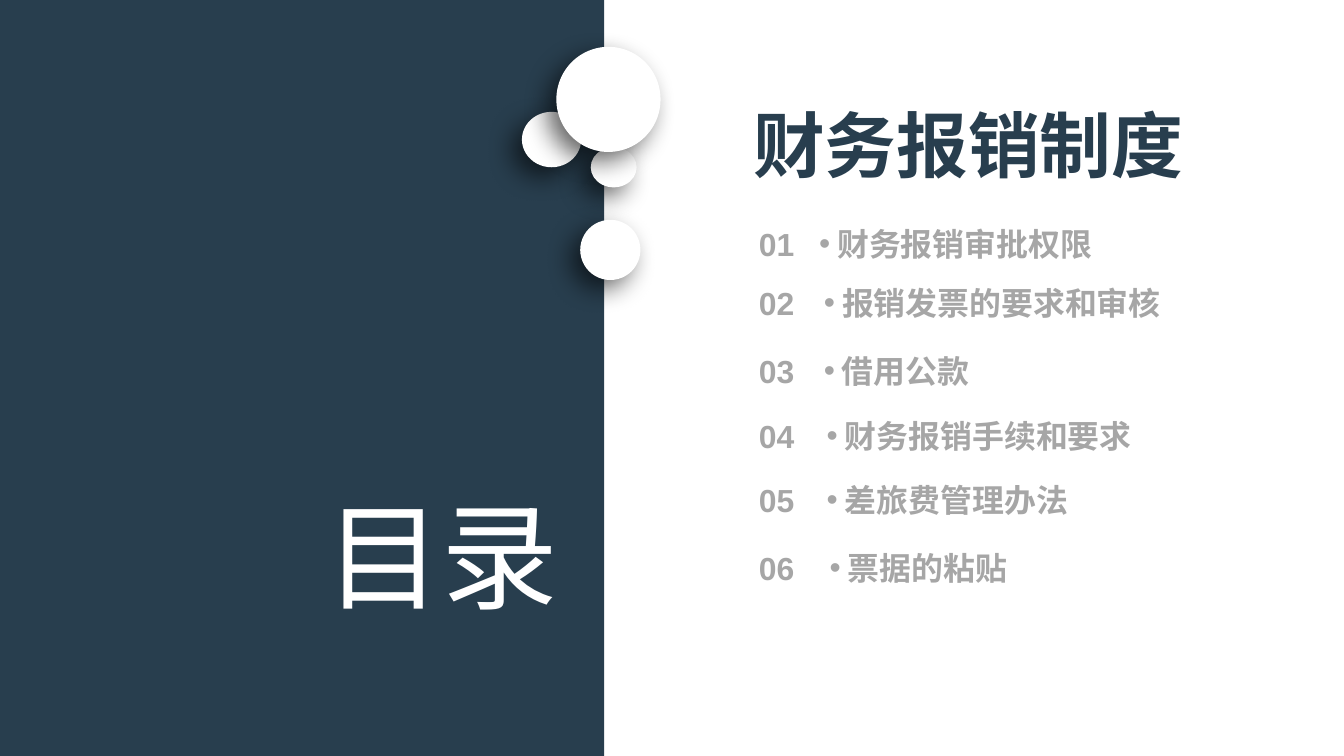
from dataclasses import dataclass

from lxml.etree import SubElement
from pptx import Presentation
from pptx.dml.color import RGBColor
from pptx.enum.shapes import MSO_SHAPE
from pptx.enum.text import MSO_AUTO_SIZE, PP_ALIGN
from pptx.oxml.ns import qn
from pptx.shapes.autoshape import Shape
from pptx.slide import Slide
from pptx.text.text import _Paragraph
from pptx.util import Inches, Pt

COLORS = {"navy": "283E4E", "white": "FFFFFF", "gray": "A6A6A6", "shadow": "000000"}
BULLET_INDENT = Inches(0.19)


@dataclass
class Box:
    left: float
    top: float
    width: float
    height: float

    def emu(self) -> list[int]:
        return [Inches(v) for v in (self.left, self.top, self.width, self.height)]


@dataclass
class Entry:
    top: float
    left: float
    text: str


@dataclass
class Style:
    size: int
    color: str
    font: str = "Arial"
    bold: bool = True


ENTRY_STYLE = Style(24, "gray")

CIRCLES = [
    Box(6.18, 1.54, 0.48, 0.42),
    Box(5.46, 1.17, 0.62, 0.58),
    Box(6.07, 2.3, 0.63, 0.63),
    Box(5.82, 0.49, 1.09, 1.1),
]

ENTRIES = [
    Entry(2.3, 8.47, "财务报销审批权限"),
    Entry(2.92, 8.52, "报销发票的要求和审核"),
    Entry(3.63, 8.52, "借用公款"),
    Entry(4.31, 8.55, "财务报销手续和要求"),
    Entry(4.98, 8.55, "差旅费管理办法"),
    Entry(5.69, 8.58, "票据的粘贴"),
]


def add_filled(slide: Slide, kind: MSO_SHAPE, box: Box, color: str) -> Shape:
    sp = slide.shapes.add_shape(kind, *box.emu())
    sp.shadow.inherit = False
    sp.fill.solid()
    sp.fill.fore_color.rgb = RGBColor.from_string(COLORS[color])
    sp.line.fill.background()
    return sp


def add_circle(slide: Slide, box: Box) -> None:
    sp = add_filled(slide, MSO_SHAPE.OVAL, box, "white")
    effects = sp._element.spPr.find(qn("a:effectLst"))
    shadow = SubElement(effects, qn("a:outerShdw"), blurRad=str(Pt(20)),
                        dist=str(Pt(10)), dir=str(135 * 60000), algn="tr",
                        rotWithShape="0")
    color = SubElement(shadow, qn("a:srgbClr"), val=COLORS["shadow"])
    SubElement(color, qn("a:alpha"), val="60000")


def add_text(slide: Slide, box: Box, text: str, style: Style,
             wrap: bool = True) -> Shape:
    sp = slide.shapes.add_textbox(*box.emu())
    tf = sp.text_frame
    tf.word_wrap = wrap
    tf.auto_size = MSO_AUTO_SIZE.SHAPE_TO_FIT_TEXT
    p = tf.paragraphs[0]
    p.text = text
    p.font.name = style.font
    p.font.size = Pt(style.size)
    p.font.bold = style.bold
    p.font.color.rgb = RGBColor.from_string(COLORS[style.color])
    return sp


def set_indent(p: _Paragraph, indent: int) -> None:
    p.level = 1
    pPr = p._p.get_or_add_pPr()
    pPr.set("marL", str(indent))
    pPr.set("indent", str(-indent))


def add_bullet(p: _Paragraph) -> None:
    defRPr = p._p.get_or_add_pPr().find(qn("a:defRPr"))
    for tag, name, value in (("a:buFont", "typeface", "Arial"),
                             ("a:buChar", "char", "•")):
        bullet = defRPr.makeelement(qn(tag), {name: value})
        defRPr.addprevious(bullet)


def add_entry(slide: Slide, number: int, entry: Entry) -> None:
    sp = add_text(slide, Box(7.84, entry.top, 0.73, 0.5), f"{number:02}", ENTRY_STYLE)
    set_indent(sp.text_frame.paragraphs[0], 0)
    width = 0.4 + 0.335 * len(entry.text)
    sp = add_text(slide, Box(entry.left, entry.top, width, 0.5), entry.text,
                  ENTRY_STYLE, wrap=False)
    p = sp.text_frame.paragraphs[0]
    set_indent(p, BULLET_INDENT)
    add_bullet(p)


def main() -> None:
    prs = Presentation()
    prs.slide_width, prs.slide_height = Inches(14.06), Inches(7.91)
    slide = prs.slides.add_slide(prs.slide_layouts[6])

    add_filled(slide, MSO_SHAPE.RECTANGLE, Box(0, 0, 6.32, 7.91), "navy")

    contents = add_text(slide, Box(3.4, 5.06, 3.79, 1.48), "目录",
                        Style(88, "white", "Roboto Condensed", False))
    tf = contents.text_frame
    tf.margin_left = tf.margin_top = tf.margin_right = tf.margin_bottom = 0

    title = add_text(slide, Box(7.53, 0.93, 5.2, 1.18), "财务报销制度",
                     Style(54, "navy"))
    title.text_frame.margin_top = Inches(0.12)
    title.text_frame.paragraphs[0].alignment = PP_ALIGN.CENTER

    for number, entry in enumerate(ENTRIES, 1):
        add_entry(slide, number, entry)
    for box in CIRCLES:
        add_circle(slide, box)

    prs.save("out.pptx")


if __name__ == "__main__":
    main()
